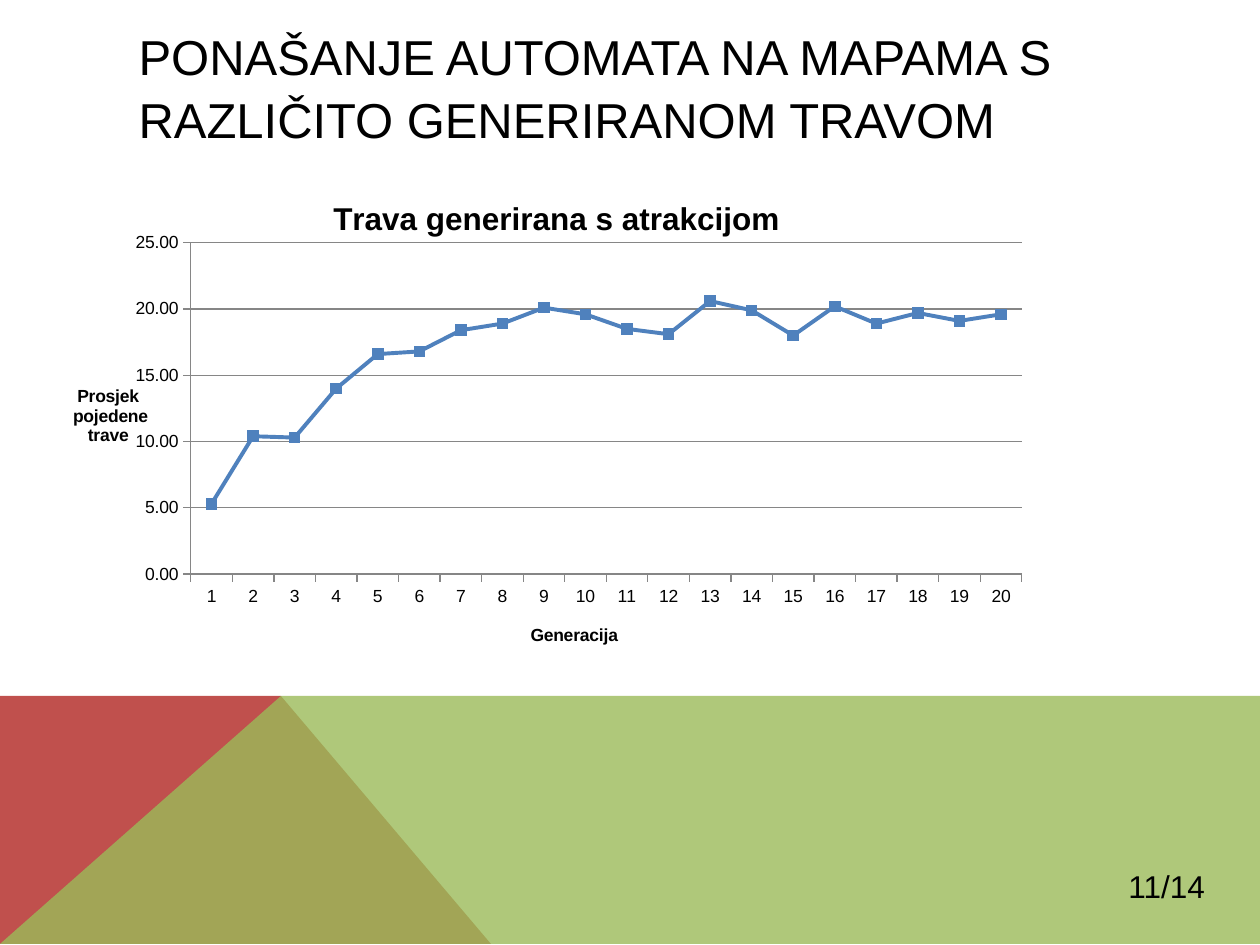
import pptx
import pptx.chart.data
import pptx.dml.color
import pptx.enum.chart
import pptx.enum.text
import pptx.oxml
import pptx.oxml.ns
import pptx.util

RGBColor = pptx.dml.color.RGBColor
Pt = pptx.util.Pt
BLACK = RGBColor(0, 0, 0)
RED = RGBColor(0xC0, 0x50, 0x4D)
GREEN = RGBColor(0x9B, 0xBB, 0x59)
BLUE = RGBColor(0x4F, 0x81, 0xBD)
GRAY = RGBColor(0x86, 0x86, 0x86)

EMU_PER_PX = 914400 / 126
NS = pptx.oxml.ns.nsdecls


def px(n):
    return pptx.util.Emu(round(n * EMU_PER_PX))


def apply(obj, values):
    for name, value in values.items():
        setattr(obj, name, value)


class SlideBuilder:
    font = "Arial"

    def __init__(self, slide):
        self.slide = slide

    def style(self, font, size, bold=False):
        apply(font, {"name": self.font, "size": Pt(size), "bold": bold})
        font.color.rgb = BLACK

    def fill_text(self, sp, text, size, **frame):
        tf = sp.text_frame
        apply(tf, frame)
        p = tf.paragraphs[0]
        p.alignment = pptx.enum.text.PP_ALIGN.LEFT
        r = p.add_run()
        r.text = text
        self.style(r.font, size)
        return p

    def title(self, text, x, y, w, h):
        sp = self.slide.shapes.title
        apply(sp, {"left": px(x), "top": px(y), "width": px(w), "height": px(h)})
        p = self.fill_text(sp, text, 28, word_wrap=True,
                           auto_size=pptx.enum.text.MSO_AUTO_SIZE.NONE,
                           vertical_anchor=pptx.enum.text.MSO_ANCHOR.MIDDLE)
        p.line_spacing = 1.07

    def text(self, text, x, y, w, h):
        sp = self.slide.shapes.add_textbox(px(x), px(y), px(w), px(h))
        self.fill_text(sp, text, 18, word_wrap=True)

    def polygon(self, points, color, opacity=100):
        (x, y), *rest = points
        fb = self.slide.shapes.build_freeform(x, y, scale=EMU_PER_PX)
        fb.add_line_segments(rest, close=True)
        sp = fb.convert_to_shape()
        sp.shadow.inherit = False
        sp.fill.solid()
        sp.fill.fore_color.rgb = color
        sp.line.fill.background()
        if opacity < 100:
            clr = sp.fill._xPr.find(".//" + pptx.oxml.ns.qn("a:srgbClr"))
            clr.append(pptx.oxml.parse_xml(
                f'<a:alpha {NS("a")} val="{opacity * 1000}"/>'))

    def layout_xml(self, target="", **fractions):
        modes = "".join(f'<c:{k}Mode val="edge"/>' for k in "xy")
        values = "".join(f'<c:{k} val="{v}"/>' for k, v in fractions.items())
        return pptx.oxml.parse_xml(
            f'<c:layout {NS("c")}><c:manualLayout>{target}{modes}{values}'
            '</c:manualLayout></c:layout>')

    def replace_layout(self, parent, layout, index):
        for old in parent.findall(pptx.oxml.ns.qn("c:layout")):
            parent.remove(old)
        parent.insert(index, layout)

    def chart_title(self, title, text, size, x, y):
        tf = title.text_frame
        tf.text = text
        tf._txBody.bodyPr.set("rot", "0")
        tf._txBody.bodyPr.set("vert", "horz")
        for p in tf.paragraphs:
            p.alignment = pptx.enum.text.PP_ALIGN.CENTER
            for r in p.runs:
                self.style(r.font, size, bold=True)
        self.replace_layout(title._element, self.layout_xml(x=x, y=y), 1)

    def line_chart(self, values, x, y, w, h):
        data = pptx.chart.data.CategoryChartData()
        data.categories = [str(i + 1) for i in range(len(values))]
        data.add_series("Series 1", values)
        chart = self.slide.shapes.add_chart(
            pptx.enum.chart.XL_CHART_TYPE.LINE_MARKERS,
            px(x), px(y), px(w), px(h), data).chart
        chart.has_legend = False
        self.style(chart.font, 10)
        self.replace_layout(
            chart._chartSpace.chart.plotArea,
            self.layout_xml('<c:layoutTarget val="inner"/>',
                            x=0.13, y=0.18, w=0.79, h=0.65), 0)

        # Titles
        self.chart_title(chart.chart_title, "Trava generirana s atrakcijom",
                         18, 0.26, 0.08)
        self.chart_title(chart.category_axis.axis_title, "Generacija",
                         10, 0.45, 0.92)
        self.chart_title(chart.value_axis.axis_title,
                         "Prosjek\n pojedene\ntrave", 10, 0.01, 0.45)

        # Axes and gridlines
        val = chart.value_axis
        apply(val, {"minimum_scale": 0, "maximum_scale": 25, "major_unit": 5,
                    "has_major_gridlines": True})
        apply(val.tick_labels, {"number_format": "#,##0.00",
                                "number_format_is_linked": False})
        for axis in (chart.category_axis, val):
            axis.major_tick_mark = pptx.enum.chart.XL_TICK_MARK.OUTSIDE
        for part in (chart.category_axis, val, val.major_gridlines):
            part.format.line.color.rgb = GRAY
            part.format.line.width = Pt(0.75)

        # Series
        chart.plots[0].vary_by_categories = False
        s = chart.plots[0].series[0]
        s.smooth = False
        s.format.line.color.rgb = BLUE
        s.format.line.width = Pt(2.25)
        apply(s.marker, {"style": pptx.enum.chart.XL_MARKER_STYLE.SQUARE,
                         "size": 6})
        s.marker.format.fill.solid()
        s.marker.format.fill.fore_color.rgb = BLUE
        s.marker.format.line.color.rgb = BLUE


def main():
    prs = pptx.Presentation()
    apply(prs, {"slide_width": px(1260), "slide_height": px(945)})
    s = SlideBuilder(prs.slides.add_slide(prs.slide_layouts[5]))

    # Bottom band
    s.polygon([(0, 944), (0, 696), (281, 696), (491, 944)], RED)
    s.polygon([(0, 944), (281, 696), (1260, 696), (1260, 944)], GREEN, 80)

    # Title, chart and page number
    s.title("PONAŠANJE AUTOMATA NA MAPAMA S RAZLIČITO GENERIRANOM TRAVOM",
            126, 20, 1036, 130)
    s.line_chart([5.3, 10.4, 10.3, 14, 16.6, 16.8, 18.4, 18.9, 20.1, 19.6,
                  18.5, 18.1, 20.6, 19.9, 18, 20.2, 18.9, 19.7, 19.1, 19.6],
                 54, 151, 1052, 510)
    s.text("11/14", 1116, 861, 118, 50)
    prs.save("out.pptx")


if __name__ == "__main__":
    main()
